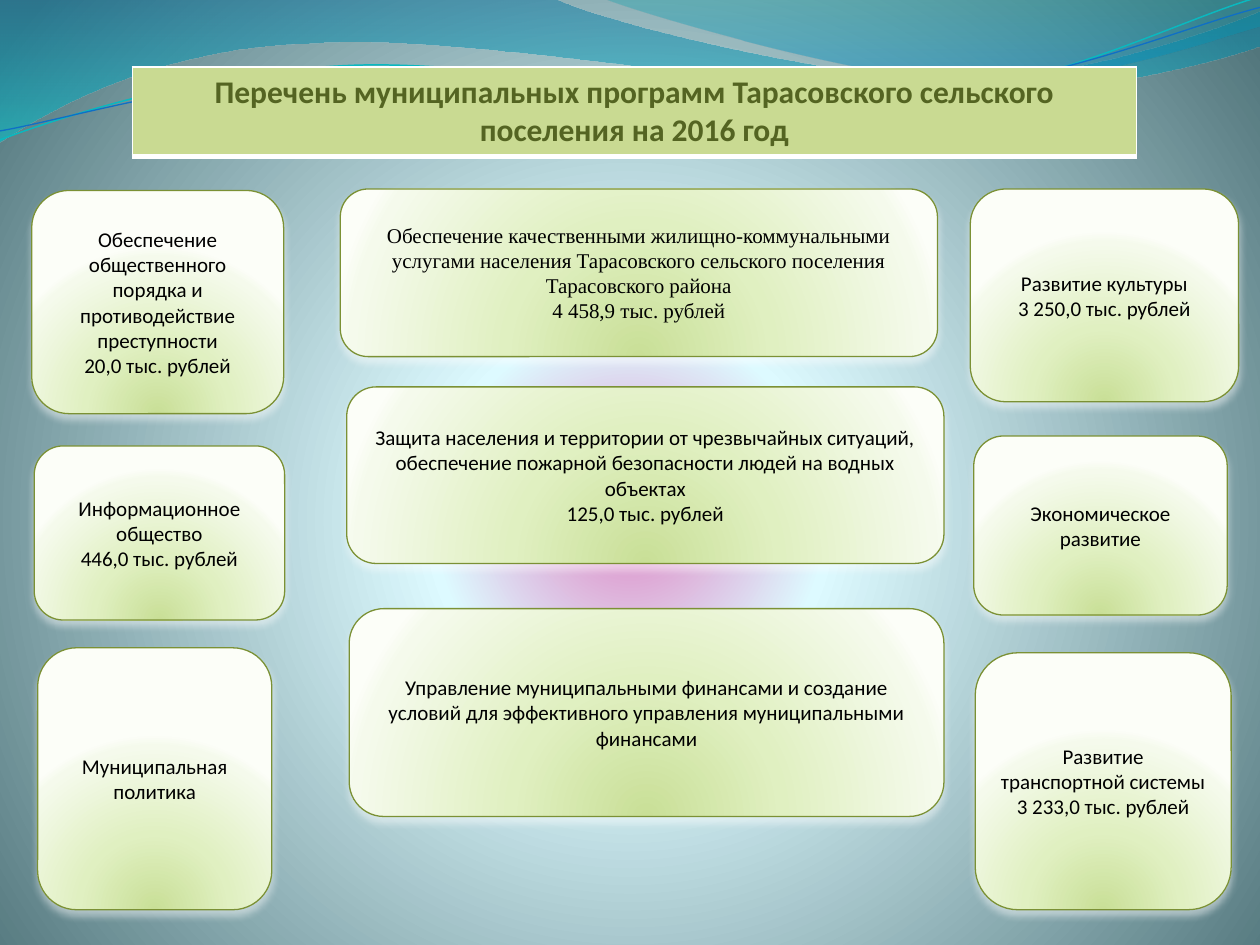
from lxml.etree import SubElement
from pptx import Presentation
from pptx.dml.color import RGBColor
from pptx.enum.shapes import MSO_SHAPE
from pptx.enum.text import MSO_ANCHOR, PP_ALIGN
from pptx.oxml import parse_xml
from pptx.oxml.ns import qn
from pptx.util import Cm, Pt

NS = 'xmlns:a="http://schemas.openxmlformats.org/drawingml/2006/main"'
BODY = {"size": Pt(12), "name": "Calibri", "bold": False}
HEAD = {"size": Pt(18), "name": "Calibri", "bold": True}
GREEN = [(0, "C9DF97", 100), (43, "E0F0C1", 100), (93, "F5FAEC", 100), (100, "FCFEF8", 100)]
SKY = [(0, "DE86C5", 100), (25, "DDFAFF", 100), (100, "52767C", 100)]
TITLE = "Перечень муниципальных программ Тарасовского сельского поселения на 2016 год"

LEFT = [
    (0, 0, 5.08, 4.5, "Calibri", ["Обеспечение общественного порядка и противодействие преступности",
                                  "20,0 тыс. рублей"]),
    (0.05, 5.15, 5.05, 3.51, "Calibri", ["Информационное общество", "446,0 тыс. рублей"]),
    (0.12, 9.22, 4.72, 5.28, "Calibri", ["Муниципальная политика"]),
]
MID = [
    (0, 0, 12.04, 3.38, "Times New Roman",
     ["Обеспечение качественными жилищно-коммунальными услугами населения "
      "Тарасовского сельского поселения Тарасовского района", "4 458,9 тыс. рублей"]),
    (0.13, 3.99, 12.04, 3.56, "Calibri",
     ["Защита населения и территории от чрезвычайных ситуаций, обеспечение "
      "пожарной безопасности людей на водных объектах", "125,0 тыс. рублей"]),
    (0.18, 8.46, 11.99, 4.19, "Calibri",
     ["Управление муниципальными финансами и создание условий для "
      "эффективного управления муниципальными финансами"]),
]
RIGHT = [
    (0, 0, 5.41, 4.29, "Calibri", ["Развитие культуры", "3 250,0 тыс. рублей"]),
    (0.07, 4.98, 5.11, 3.61, "Calibri", ["Экономическое развитие"]),
    (0.1, 9.35, 5.16, 5.18, "Calibri", ["Развитие транспортной системы", "3 233,0 тыс. рублей"]),
]

BANDS = [
    ([(0, 0), (11.18, -0.03), (12.09, 0.43, 16.87, 1.6, 19.25, 1.6),
      (21.67, 1.6, 24.33, 0.66, 25.4, 0.23), (25.43, 0.91),
      (24.97, 1.12, 22.1, 1.93, 18.95, 1.91), (15.8, 1.91, 9.7, 0.71, 6.53, 0.86),
      (3.28, 0.91, 1.17, 2.11, -0.03, 2.87)],
     [(0, "0074A1", 45), (100, "00C6CF", 55)]),
    ([(12.17, -0.03), (12.93, 0.28, 17.32, 1.57, 19.53, 1.65),
      (21.74, 1.75, 24.41, 0.81, 25.4, 0.53), (25.4, 0)],
     [(0, "00A1A9", 30), (80, "008BBF", 45)]),
]
LINES = [
    ([(0, 2.82), (1.22, 2.36, 4.01, 1.45, 7.04, 1.32), (10.03, 1.19, 15.06, 2.26, 18.11, 2.03),
      (21.16, 1.8, 23.83, 0.38, 25.35, -0.05)], "0AB8BF", 0.85),
    ([(0, 2.64), (1.19, 2.44, 4.17, 1.55, 7.19, 1.42), (10.24, 1.3, 15.16, 2.13, 18.21, 1.91),
      (21.23, 1.7, 23.9, 0.53, 25.4, 0.15)], "0F6FC6", 0.75),
]


def hue(code):
    """Turn a hex string into a colour."""
    return RGBColor.from_string(code)


def style(item, vals):
    """Set each attribute of the item from a dict."""
    for key, val in vals.items():
        setattr(item, key, val)


def blend(fill, node, stops, rect=None):
    """Give the node a gradient: radial with a rect, else downward."""
    fill.solid()
    marks = "".join(
        f'<a:gs pos="{pos * 1000}"><a:srgbClr val="{code}"><a:alpha val="{alpha * 1000}"/>'
        f"</a:srgbClr></a:gs>" for pos, code, alpha in stops)
    if rect:
        sides = " ".join(f'{k}="{v * 1000}"' for k, v in zip("ltrb", rect))
        way = f'<a:path path="circle"><a:fillToRect {sides}/></a:path>'
    else:
        way = '<a:lin ang="5400000" scaled="1"/>'
    grad = parse_xml(f'<a:gradFill {NS} rotWithShape="1"><a:gsLst>{marks}</a:gsLst>{way}</a:gradFill>')
    node.replace(node.find(qn("a:solidFill")), grad)


def write(frame, lines, font, code):
    """Fill a text frame with centred paragraphs."""
    frame.word_wrap = True
    for num, line in enumerate(lines):
        para = frame.add_paragraph() if num else frame.paragraphs[0]
        para.alignment = PP_ALIGN.CENTER
        run = para.add_run()
        run.text = line
        style(run.font, font)
        run.font.color.rgb = hue(code)


def bend(shape, segs):
    """Join each three steps of a cubic segment into one curve."""
    steps = iter(list(shape._element.iter(qn("a:lnTo"))))
    for seg in segs[1:]:
        group = [next(steps) for _ in range(len(seg) // 2)]
        if len(group) == 3:
            cubic = parse_xml(f"<a:cubicBezTo {NS}/>")
            group[0].addprevious(cubic)
            for step in group:
                cubic.append(step[0])
                step.getparent().remove(step)


def curve(slide, box, segs, close):
    """Draw an outline from the top left of the box."""
    pts = [(Cm(box[0] + seg[i]), Cm(box[1] + seg[i + 1]))
           for seg in segs for i in range(0, len(seg), 2)]
    form = slide.shapes.build_freeform(*pts[0])
    form.add_line_segments(pts[1:], close=close)
    shape = form.convert_to_shape()
    bend(shape, segs)
    shape.shadow.inherit = False
    return shape


def waves(slide, box):
    """Draw the bands and thin lines along the top."""
    for segs, stops in BANDS:
        shape = curve(slide, box, segs, True)
        shape.line.fill.background()
        blend(shape.fill, shape._element.spPr, stops)
    for segs, code, width in LINES:
        shape = curve(slide, box, segs, False)
        shape.fill.background()
        shape.line.color.rgb = hue(code)
        shape.line.width = Pt(width)


def header(slide, box):
    """Place the title as a table of one cell."""
    table = slide.shapes.add_table(1, 1, *map(Cm, box)).table
    style(table, {"first_row": False, "horz_banding": False})
    cell = table.cell(0, 0)
    write(cell.text_frame, [TITLE], HEAD, "546422")
    props = cell._tc.get_or_add_tcPr()
    for side, width in zip("LRTB", (1, 1, 1, 3)):
        edge = SubElement(props, qn(f"a:ln{side}"), w=str(Pt(width)))
        SubElement(SubElement(edge, qn("a:solidFill")), qn("a:srgbClr"), val="FFFFFF")
    cell.fill.solid()
    cell.fill.fore_color.rgb = hue("C9DA92")


def column(slide, box, cards):
    """Place cards at their offsets from the top left of the box."""
    for x, y, wide, high, face, lines in cards:
        area = map(Cm, (box[0] + x, box[1] + y, wide, high))
        shape = slide.shapes.add_shape(MSO_SHAPE.ROUNDED_RECTANGLE, *area)
        props = shape._element.spPr
        blend(shape.fill, props, GREEN, (50, 130, 50, -30))
        shape.line.color.rgb = hue("7B9135")
        shape.line.width = Pt(0.75)
        shape.shadow.inherit = False
        props.find(qn("a:effectLst")).append(parse_xml(
            f'<a:outerShdw {NS} blurRad="{Pt(4.5)}" dist="{Pt(3)}" dir="5400000" rotWithShape="0">'
            '<a:srgbClr val="FFFFFF"><a:alpha val="48000"/></a:srgbClr></a:outerShdw>'))
        shape.text_frame.vertical_anchor = MSO_ANCHOR.MIDDLE
        write(shape.text_frame, lines, {**BODY, "name": face}, "000000")


def main():
    """Build the slide and save it."""
    deck = Presentation()
    style(deck, {"slide_width": Cm(25.4), "slide_height": Cm(19.05)})
    slide = deck.slides.add_slide(deck.slide_layouts[6])
    back = slide.background.fill
    back.solid()
    blend(back, slide._element.cSld.bg.bgPr, SKY, (10, 110, 10, 100))
    waves(slide, (0, 0))
    header(slide, (2.67, 1.35, 20.24, 1.78))
    column(slide, (0.64, 3.84), LEFT)
    column(slide, (6.86, 3.81), MID)
    column(slide, (19.56, 3.81), RIGHT)
    deck.save("out.pptx")


if __name__ == "__main__":
    main()
